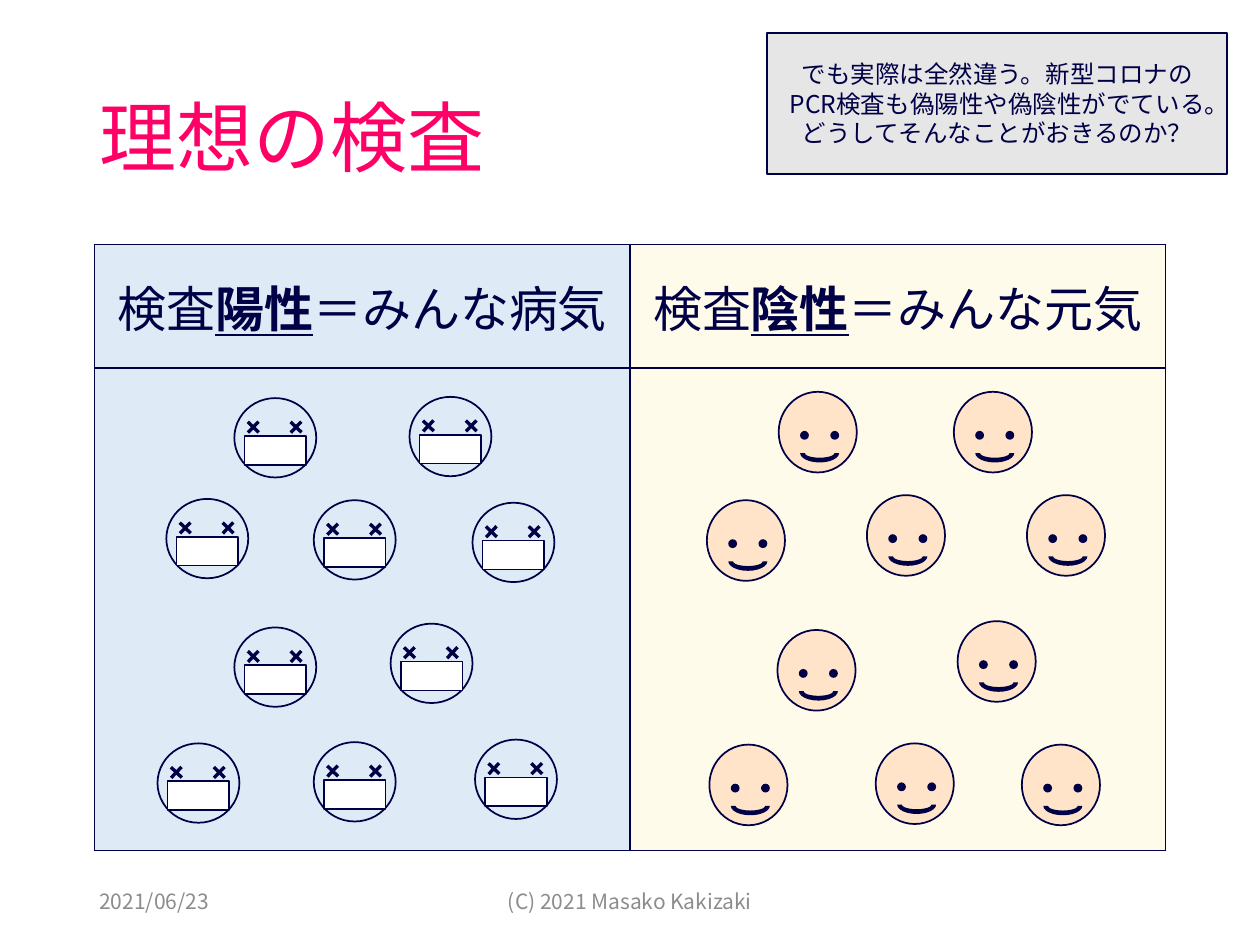
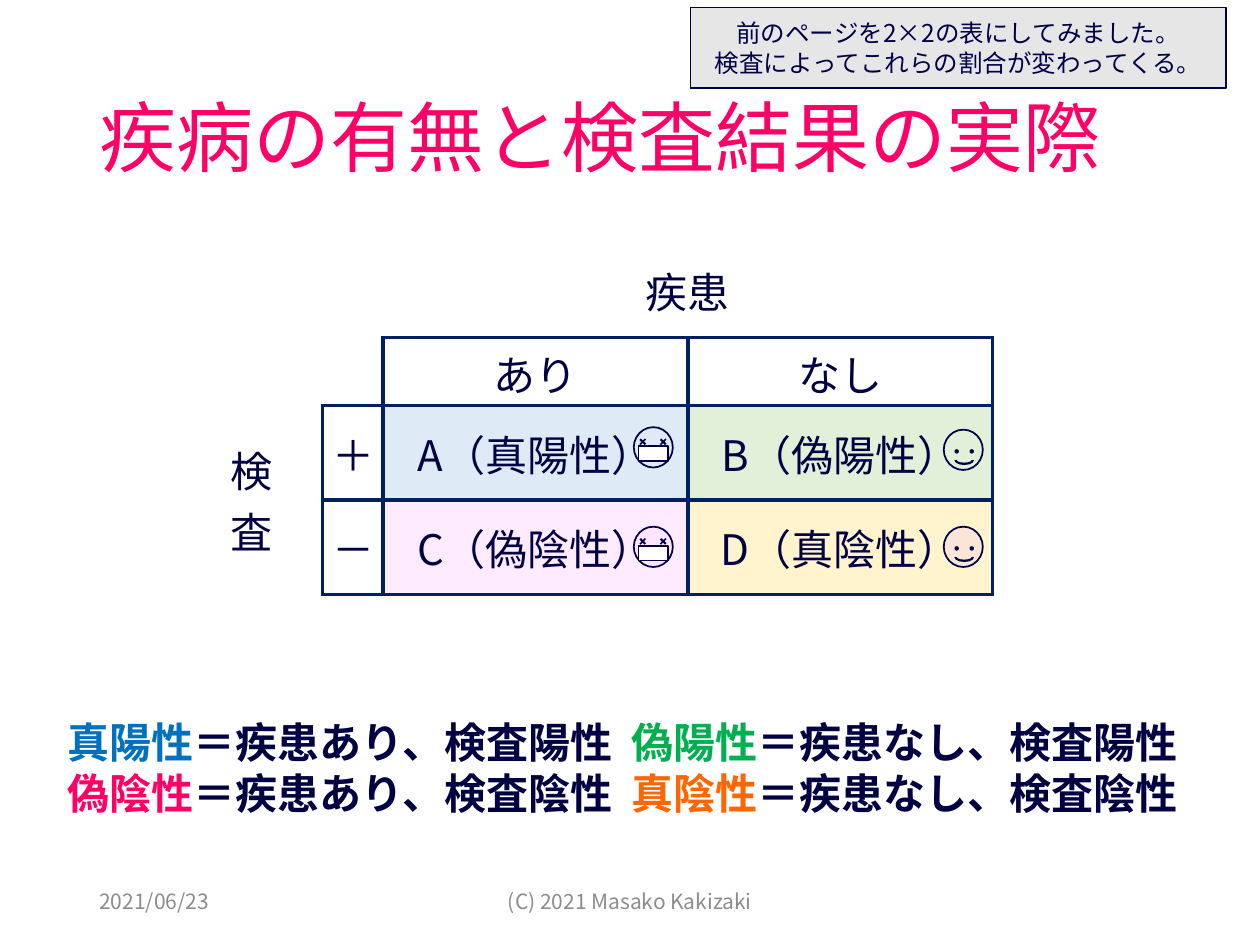
from dataclasses import dataclass

from lxml import etree
from pptx import Presentation
from pptx.dml.color import RGBColor
from pptx.enum import shapes, text
from pptx.oxml import ns
from pptx.util import Inches, Pt

FONT = "Noto Sans CJK JP"
COLORS = {
    "ink": "000046", "table_ink": "000042", "rule": "002060", "title": "FF0066",
    "footer": "8C8C8C", "callout": "E7E6E6", "white": "FFFFFF",
    "sick": "DEEBF7", "cream": "FFFBEB", "skin": "FFE4C9",
    "false_pos": "E2F0D9", "false_neg": "FFEBFF", "true_neg": "FFF4CD",
    "pink_face": "FFE5FF", "peach_face": "FBE5D6",
    "blue": "0070C0", "green": "00B050", "red": "FF0066", "orange": "FF6600",
}
LEFT, CENTER = text.PP_ALIGN.LEFT, text.PP_ALIGN.CENTER
SHAPE = shapes.MSO_SHAPE


@dataclass
class Run:
    text: str
    color: str | None = None
    emphasis: bool = False


@dataclass
class Style:
    size: float
    color: str
    align: text.PP_ALIGN = CENTER
    bold: bool | None = None
    spacing: float | None = None
    tab: float | None = None


@dataclass
class Box:
    left: float
    top: float
    width: float
    height: float

    def lengths(self) -> list:
        return [Inches(v) for v in (self.left, self.top, self.width, self.height)]


@dataclass
class Feature:
    kind: shapes.MSO_SHAPE
    box: Box
    rotation: float = 0
    adjustment: float | None = None
    fill: str = "ink"
    outlined: bool = False


@dataclass
class Face:
    """A head of a given size, with features placed relative to its corner."""
    width: float
    height: float
    features: list[Feature]


@dataclass
class Cell:
    runs: list[Run]
    fill: str | None = None
    borders: str = "LRTB"
    align: text.PP_ALIGN = CENTER


SICK = Face(0.65, 0.63, [
    Feature(SHAPE.RECTANGLE, Box(0.08, 0.3, 0.49, 0.23), fill="white", outlined=True),
    *(Feature(SHAPE.CROSS, Box(x, 0.17, 0.12, 0.12), 43.8, 0.39) for x in (0.09, 0.43)),
])
HEALTHY = Face(0.62, 0.64, [
    *(Feature(SHAPE.OVAL, Box(x, 0.31, 0.07, 0.07)) for x in (0.17, 0.41)),
    Feature(SHAPE.BLOCK_ARC, Box(0.17, 0.41, 0.31, 0.15), 180),
])

TITLE = Style(44, "title", LEFT, spacing=0.9)
CALLOUT = Style(14, "ink")
LEGEND = Style(24, "table_ink", LEFT, bold=True, tab=4.47)

SICK_SPOTS = [
    (1.86, 3.16), (3.25, 3.15), (1.32, 3.96), (2.49, 3.97), (3.75, 3.99),
    (1.86, 4.98), (3.1, 4.95), (1.25, 5.9), (2.49, 5.89), (3.77, 5.87),
]
HEALTHY_SPOTS = [
    (6.18, 3.11), (7.57, 3.11), (5.61, 3.97), (6.88, 3.93), (8.15, 3.93),
    (6.17, 5), (7.6, 4.93), (5.63, 5.91), (6.95, 5.9), (8.11, 5.91),
]


def rgb(name: str) -> RGBColor:
    return RGBColor.from_string(COLORS[name])


def style_paragraph(paragraph, runs: list[Run], style: Style) -> None:
    paragraph.alignment = style.align
    if style.spacing:
        paragraph.line_spacing = style.spacing
    font = paragraph.font
    font.size, font.name, font.bold = Pt(style.size), FONT, style.bold
    font.color.rgb = rgb(style.color)
    etree.SubElement(font._element, ns.qn("a:ea"), typeface=FONT)
    if style.tab:
        tabs = etree.Element(ns.qn("a:tabLst"))
        etree.SubElement(tabs, ns.qn("a:tab"), pos=str(Inches(style.tab)), algn="l")
        font._element.addprevious(tabs)
    for piece in runs:
        run = paragraph.add_run()
        run.text = piece.text
        if piece.color:
            run.font.color.rgb = rgb(piece.color)
        if piece.emphasis:
            run.font.bold = run.font.underline = True


def write(frame, lines: list[list[Run]], style: Style,
          anchor=text.MSO_ANCHOR.MIDDLE) -> None:
    frame.word_wrap = True
    frame.vertical_anchor = anchor
    for index, runs in enumerate(lines):
        paragraph = frame.add_paragraph() if index else frame.paragraphs[0]
        style_paragraph(paragraph, runs, style)


def add_text(slide, box: Box, lines: list[list[Run]], style: Style, **options) -> None:
    write(slide.shapes.add_textbox(*box.lengths()).text_frame, lines, style, **options)


def add_filled(parent, kind, box: Box, fill: str, outlined: bool = True):
    shape = parent.shapes.add_shape(kind, *box.lengths())
    shape.shadow.inherit = False
    shape.fill.solid()
    shape.fill.fore_color.rgb = rgb(fill)
    if outlined:
        shape.line.color.rgb = rgb("ink")
        shape.line.width = Pt(1)
    else:
        shape.line.fill.background()
    return shape


def add_face(slide, face: Face, left: float, top: float, skin: str,
             width: float | None = None, height: float | None = None) -> None:
    width, height = width or face.width, height or face.height
    scale_x, scale_y = width / face.width, height / face.height
    group = slide.shapes.add_group_shape()
    add_filled(group, SHAPE.OVAL, Box(left, top, width, height), skin)
    for feature in face.features:
        box = Box(left + feature.box.left * scale_x, top + feature.box.top * scale_y,
                  feature.box.width * scale_x, feature.box.height * scale_y)
        drawn = add_filled(group, feature.kind, box, feature.fill, feature.outlined)
        drawn.rotation = feature.rotation
        if feature.adjustment is not None:
            drawn.adjustments[0] = feature.adjustment


def add_callout(slide, box: Box, lines: list[str]) -> None:
    note = add_filled(slide, SHAPE.RECTANGLE, box, "callout")
    write(note.text_frame, [[Run(line)] for line in lines], CALLOUT)


def set_borders(cell, sides: str, color: str, width: float) -> None:
    properties = cell._tc.get_or_add_tcPr()
    for side in "LRTB":
        line = etree.SubElement(properties, ns.qn(f"a:ln{side}"), w=str(Pt(width)))
        if side in sides:
            fill = etree.SubElement(line, ns.qn("a:solidFill"))
            etree.SubElement(fill, ns.qn("a:srgbClr"), val=COLORS[color])
        else:
            etree.SubElement(line, ns.qn("a:noFill"))


def add_grid(slide, box: Box, columns: list[float], rows: list[float],
             cells: list[list[Cell]], size: float, ink: str,
             rule: str, rule_width: float, margin: float):
    table = slide.shapes.add_table(len(rows), len(columns), *box.lengths()).table
    table.first_row = table.horz_banding = False
    for column, width in zip(table.columns, columns):
        column.width = Inches(width)
    for row, height in zip(table.rows, rows):
        row.height = Inches(height)
    for r, line in enumerate(cells):
        for c, content in enumerate(line):
            cell = table.cell(r, c)
            set_borders(cell, content.borders, rule, rule_width)
            if content.fill:
                cell.fill.solid()
                cell.fill.fore_color.rgb = rgb(content.fill)
            else:
                cell.fill.background()
            cell.vertical_anchor = text.MSO_ANCHOR.MIDDLE
            cell.margin_left = cell.margin_right = Inches(margin)
            cell.margin_top = cell.margin_bottom = Inches(margin / 2)
            if content.runs:
                style_paragraph(cell.text_frame.paragraphs[0], content.runs,
                                Style(size, ink, content.align))
    return table


def add_frame(slide, title: str) -> None:
    """Add the title and the footers shared by every slide."""
    add_text(slide, Box(0.69, 0.4, 8.62, 1.45), [[Run(title)]], TITLE)
    add_text(slide, Box(0.69, 6.95, 2.25, 0.4), [[Run("2021/06/23")]],
             Style(12, "footer", LEFT))
    add_text(slide, Box(3.31, 6.95, 3.38, 0.4), [[Run("(C) 2021 Masako Kakizaki")]],
             Style(12, "footer"))


def build_ideal_test(slide) -> None:
    results = [("陽性", "＝みんな病気", "sick"), ("陰性", "＝みんな元気", "cream")]
    headings = [Cell([Run("検査"), Run(result, emphasis=True), Run(meaning)], fill)
                for result, meaning, fill in results]
    crowds = [Cell([], fill) for _, _, fill in results]
    add_grid(slide, Box(0.75, 1.94, 8.5, 4.81), [4.25, 4.25], [0.98, 3.83],
             [headings, crowds], 28, "ink", "ink", 1, 0.1)
    add_frame(slide, "理想の検査")
    for left, top in SICK_SPOTS:
        add_face(slide, SICK, left, top, "sick")
    for left, top in HEALTHY_SPOTS:
        add_face(slide, HEALTHY, left, top, "skin")
    add_callout(slide, Box(6.09, 0.26, 3.65, 1.12), [
        "でも実際は全然違う。新型コロナのPCR検査も偽陽性や偽陰性がでている。"
        "どうしてそんなことがおきるのか？"])


def build_actual_results(slide) -> None:
    def label(words: str, fill: str | None = None) -> Cell:
        return Cell([Run(words)], fill)

    cells = [
        [Cell([], borders=""), Cell([], borders=""),
         Cell([Run("疾患")], borders="B"), Cell([], borders="B")],
        [Cell([], borders=""), Cell([], borders="RB"), label("あり"), label("なし")],
        [Cell([Run("検査")], borders="R", align=LEFT), label("＋"),
         label("A（真陽性）", "sick"), label("B（偽陽性）", "false_pos")],
        [Cell([], borders="R"), label("－"),
         label("C（偽陰性）", "false_neg"), label("D（真陰性）", "true_neg")],
    ]
    table = add_grid(slide, Box(1.75, 1.93, 6.13, 2.79), [0.81, 0.48, 2.42, 2.42],
                     [0.75, 0.54, 0.75, 0.75], cells, 24, "table_ink", "rule", 2.25, 0.08)
    table.cell(0, 2).merge(table.cell(0, 3))
    table.cell(2, 0).merge(table.cell(3, 0))

    legend = [
        ("検査陽性", ("真陽性", "blue"), ("偽陽性", "green")),
        ("検査陰性", ("偽陰性", "red"), ("真陰性", "orange")),
    ]
    add_text(slide, Box(0.44, 5.64, 9.18, 0.91), [
        [Run(*diseased), Run(f"＝疾患あり、{result}\t"),
         Run(*well), Run(f"＝疾患なし、{result}")]
        for result, diseased, well in legend
    ], LEGEND, anchor=text.MSO_ANCHOR.TOP)
    add_frame(slide, "疾病の有無と検査結果の実際")
    for face, left, top, skin in [
        (SICK, 5.03, 3.39, "sick"), (SICK, 5.03, 4.18, "pink_face"),
        (HEALTHY, 7.49, 3.41, "false_pos"), (HEALTHY, 7.49, 4.18, "peach_face"),
    ]:
        add_face(slide, face, left, top, skin, 0.31, 0.32)
    add_callout(slide, Box(5.48, 0.06, 4.25, 0.64), [
        "前のページを2×2の表にしてみました。",
        "検査によってこれらの割合が変わってくる。"])


def main() -> None:
    deck = Presentation()
    deck.slide_width, deck.slide_height = Inches(10), Inches(7.5)
    for build in (build_ideal_test, build_actual_results):
        build(deck.slides.add_slide(deck.slide_layouts[6]))
    deck.save("out.pptx")


if __name__ == "__main__":
    main()
